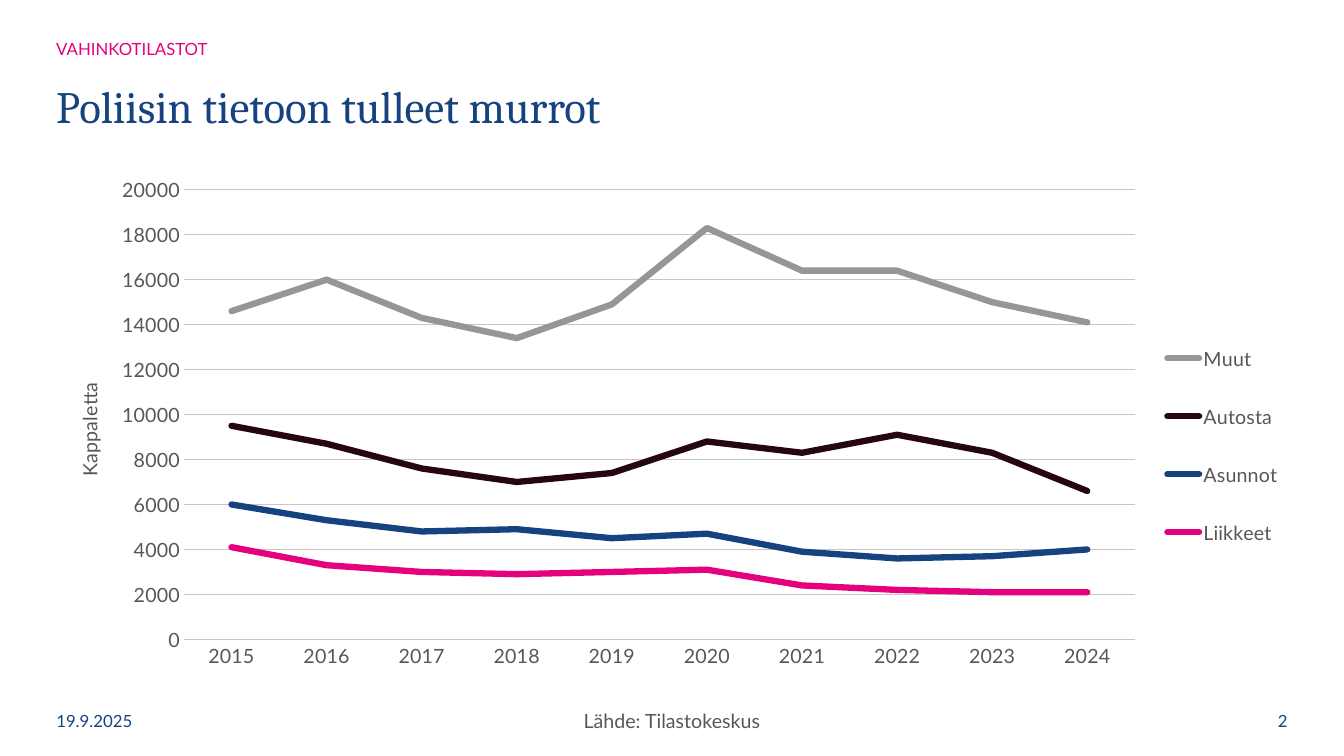
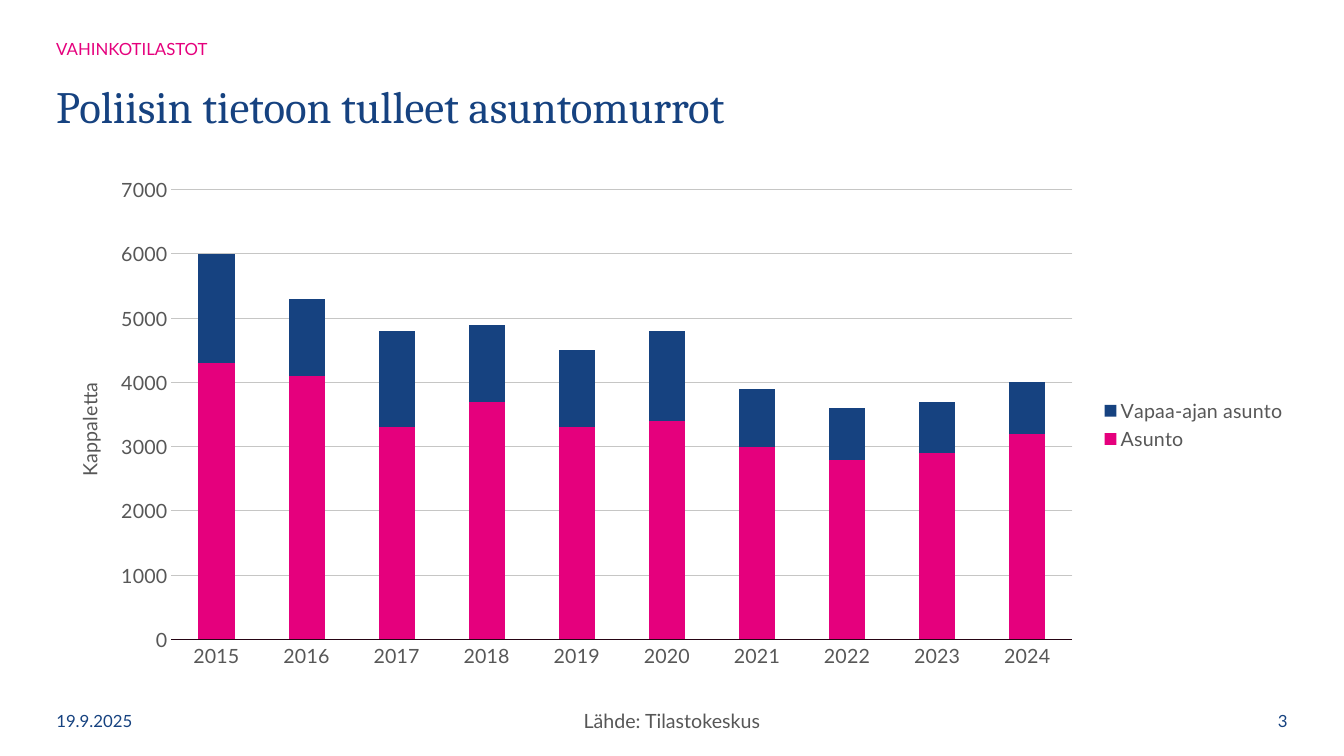
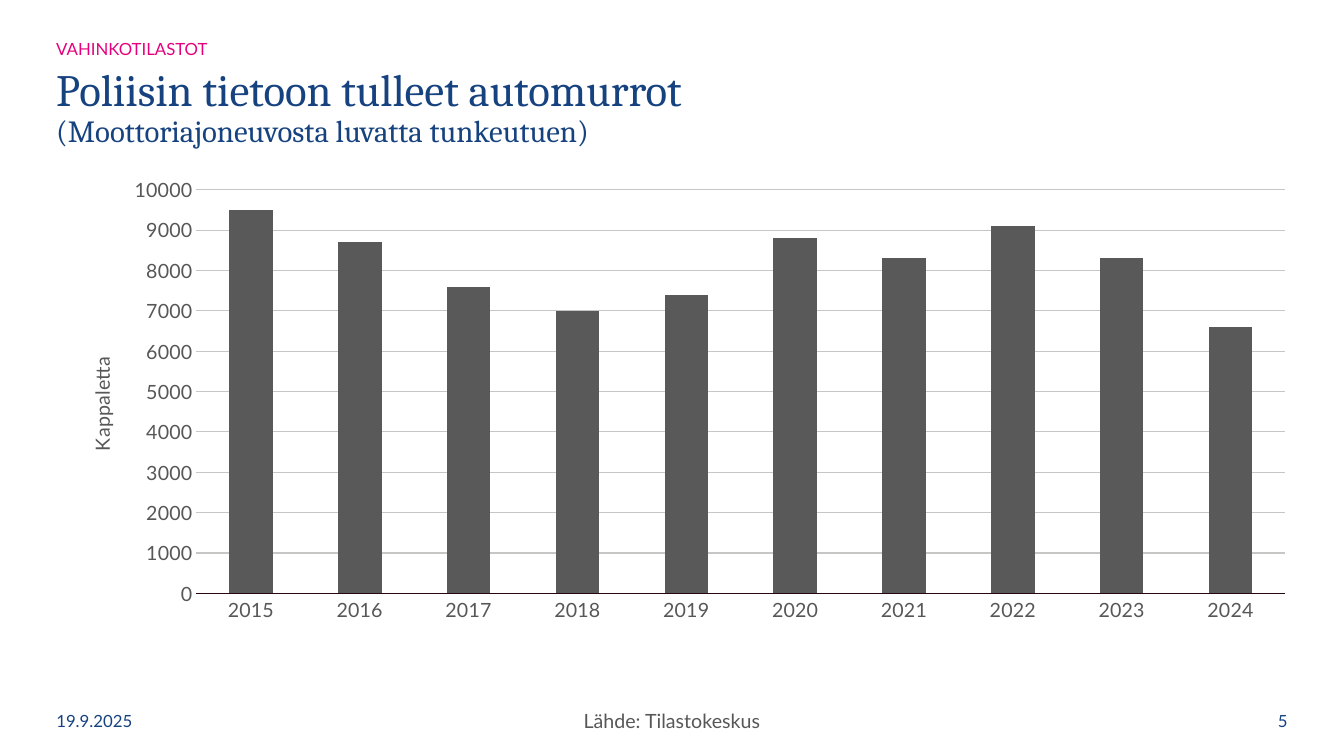
from lxml import etree
from pptx import Presentation
from pptx import util as u
from pptx.chart.data import CategoryChartData
from pptx.dml.color import RGBColor
from pptx.enum import chart as ch
from pptx.enum import text
from pptx.oxml.ns import qn

BLUE = RGBColor(0x16, 0x42, 0x80)
PINK = RGBColor(0xE5, 0x00, 0x7D)
DARK = RGBColor(0x26, 0x05, 0x14)
TEXT_GREY = RGBColor(0x57, 0x57, 0x57)
BAR_GREY = RGBColor(0x59, 0x59, 0x59)
LINE_GREY = RGBColor(0x96, 0x96, 0x96)
GRID_GREY = RGBColor(0xC6, 0xC6, 0xC5)

TITLE_FONT, BODY_FONT = "Cambria", "Lato"
WIDTH, HEIGHT, MARGIN = 13.33, 7.5, 0.46
CONTENT_W = WIDTH - 2 * MARGIN
HEAD_W = 11.56
FOOT_Y, FOOT_W, FOOT_H = 6.95, 1.18, 0.4
SOURCE_W = 2.13

YEARS = [str(year) for year in range(2015, 2025)]
CAR_BREAK_INS = (9500, 8700, 7600, 7000, 7400, 8800, 8300, 9100, 8300, 6600)


def style_font(font, size, color, name=BODY_FONT):
    font.size, font.name, font.color.rgb = u.Pt(size), name, color


def add_text(slide, box, words, size, color, font=BODY_FONT, spacing=None,
             align=text.PP_ALIGN.LEFT, anchor=text.MSO_ANCHOR.MIDDLE):
    sp = slide.shapes.add_textbox(*map(u.Inches, box))
    tf = sp.text_frame
    tf.word_wrap = True
    tf.vertical_anchor = anchor
    p = tf.paragraphs[0]
    p.alignment, p.line_spacing = align, spacing
    p.add_run().text = words
    style_font(p.font, size, color, font)
    return tf


def add_frame(slide, title, number, subtitle=None):
    """Add the section label, title and footer shared by all slides."""
    add_text(slide, (MARGIN, 0.29, HEAD_W, 0.22), "VAHINKOTILASTOT", 12, PINK,
             spacing=1.2, anchor=text.MSO_ANCHOR.TOP)
    tf = add_text(slide, (MARGIN, 0.6, HEAD_W, 0.96), title, 32, BLUE,
                  TITLE_FONT, spacing=0.9)
    if subtitle:
        p = tf.paragraphs[0]
        p.add_line_break()
        r = p.add_run()
        r.text = subtitle
        r.font.size = u.Pt(22)
    add_text(slide, (WIDTH - MARGIN - FOOT_W, FOOT_Y, FOOT_W, FOOT_H),
             str(number), 12, BLUE, align=text.PP_ALIGN.RIGHT)
    add_text(slide, (MARGIN, FOOT_Y, FOOT_W, FOOT_H), "19.9.2025", 12, BLUE)
    tf = add_text(slide, ((WIDTH - SOURCE_W) / 2, 6.98, SOURCE_W, 0.34),
                  "Lähde: Tilastokeskus", 14, TEXT_GREY,
                  align=text.PP_ALIGN.CENTER)
    tf.word_wrap = False
    tf.auto_size = text.MSO_AUTO_SIZE.SHAPE_TO_FIT_TEXT


def set_layout(parent, index, shares, inner=False):
    """Place a chart part by x, y and optional w, h as shares of the chart."""
    layout = parent.find(qn("c:layout"))
    if layout is None:
        layout = etree.Element(qn("c:layout"))
        parent.insert(index, layout)
    manual = etree.SubElement(layout, qn("c:manualLayout"))
    settings = [("layoutTarget", "inner")] if inner else []
    settings += [("xMode", "edge"), ("yMode", "edge"), *zip("xywh", shares)]
    for tag, value in settings:
        etree.SubElement(manual, qn("c:" + tag)).set("val", str(value))


def style_category_axis(axis, color):
    axis.major_tick_mark = ch.XL_TICK_MARK.NONE
    axis.format.line.color.rgb = color
    axis.format.line.width = u.Pt(0.75)
    style_font(axis.tick_labels.font, 14, TEXT_GREY)


def style_value_axis(axis, top, step, title_at):
    axis.minimum_scale, axis.maximum_scale, axis.major_unit = 0, top, step
    axis.major_tick_mark = ch.XL_TICK_MARK.NONE
    axis.format.line.fill.background()
    grid = axis.major_gridlines.format.line
    grid.color.rgb, grid.width = GRID_GREY, u.Pt(0.75)
    style_font(axis.tick_labels.font, 14, TEXT_GREY)
    p = axis.axis_title.text_frame.paragraphs[0]
    p.add_run().text = "Kappaletta"
    style_font(p.font, 14, TEXT_GREY)
    p.font.bold = False
    title = axis.axis_title._element
    body = title.find(".//" + qn("a:bodyPr"))
    body.set("rot", "-5400000")
    body.set("vert", "horz")
    set_layout(title, 1, title_at)


def add_legend(chart, place):
    chart.has_legend = True
    legend = chart.legend
    legend.position = ch.XL_LEGEND_POSITION.RIGHT
    legend.include_in_layout = False
    style_font(legend.font, 14, TEXT_GREY)
    if place:
        set_layout(legend._element, 1, place)


def add_year_chart(slide, kind, series, top, step, plot_at,
                   title_at=(0.02, 0.41), axis_color=DARK, legend_at=None):
    """Add a chart by year; series holds (name, colour, values) rows."""
    data = CategoryChartData()
    data.categories = YEARS
    for name, _, values in series:
        data.add_series(name, values)
    box = (MARGIN, 1.68, CONTENT_W, 5.07)
    chart = slide.shapes.add_chart(kind, *map(u.Inches, box), data).chart
    style_font(chart.font, 14, TEXT_GREY)
    chart.has_title = False
    style_category_axis(chart.category_axis, axis_color)
    style_value_axis(chart.value_axis, top, step, title_at)
    set_layout(chart._chartSpace.find(".//" + qn("c:plotArea")), 0,
               plot_at, inner=True)
    chart.has_legend = False
    if len(series) > 1:
        add_legend(chart, legend_at)
    plot = chart.plots[0]
    plot.vary_by_categories = False
    is_line = kind == ch.XL_CHART_TYPE.LINE
    if not is_line:
        plot.gap_width = 150
    if kind == ch.XL_CHART_TYPE.COLUMN_STACKED:
        plot.overlap = 100
    for ser, (_, color, _) in zip(plot.series, series):
        if is_line:
            ser.smooth = False
            line = ser.format.line
            line.color.rgb, line.width = color, u.Pt(4.5)
            ser._element.find(".//" + qn("a:ln")).set("cap", "rnd")
        else:
            ser.format.fill.solid()
            ser.format.fill.fore_color.rgb = color


def main():
    prs = Presentation()
    prs.slide_width, prs.slide_height = u.Inches(WIDTH), u.Inches(HEIGHT)
    burglaries, homes, cars = (
        prs.slides.add_slide(prs.slide_layouts[6]) for _ in range(3))

    add_frame(burglaries, "Poliisin tietoon tulleet murrot", 2)
    add_year_chart(burglaries, ch.XL_CHART_TYPE.LINE, [
        ("Muut", LINE_GREY, (14600, 16000, 14300, 13400, 14900,
                             18300, 16400, 16400, 15000, 14100)),
        ("Autosta", DARK, CAR_BREAK_INS),
        ("Asunnot", BLUE, (6000, 5300, 4800, 4900, 4500,
                           4700, 3900, 3600, 3700, 4000)),
        ("Liikkeet", PINK, (4100, 3300, 3000, 2900, 3000,
                            3100, 2400, 2200, 2100, 2100)),
    ], 20000, 2000, (0.11, 0.04, 0.76, 0.88), axis_color=GRID_GREY,
        legend_at=(0.89, 0.28, 0.1, 0.52))

    add_frame(homes, "Poliisin tietoon tulleet asuntomurrot", 3)
    add_year_chart(homes, ch.XL_CHART_TYPE.COLUMN_STACKED, [
        ("Asunto", PINK, (4300, 4100, 3300, 3700, 3300,
                          3400, 3000, 2800, 2900, 3200)),
        ("Vapaa-ajan asunto", BLUE, (1700, 1200, 1500, 1200, 1200,
                                     1400, 900, 800, 800, 800)),
    ], 7000, 1000, (0.1, 0.04, 0.72, 0.88))

    add_frame(cars, "Poliisin tietoon tulleet automurrot", 5,
              "(Moottoriajoneuvosta luvatta tunkeutuen)")
    add_year_chart(cars, ch.XL_CHART_TYPE.COLUMN_CLUSTERED,
                   [("Autosta", BAR_GREY, CAR_BREAK_INS)],
                   10000, 1000, (0.12, 0.04, 0.87, 0.79),
                   title_at=(0.03, 0.36))

    prs.save("out.pptx")


if __name__ == "__main__":
    main()
